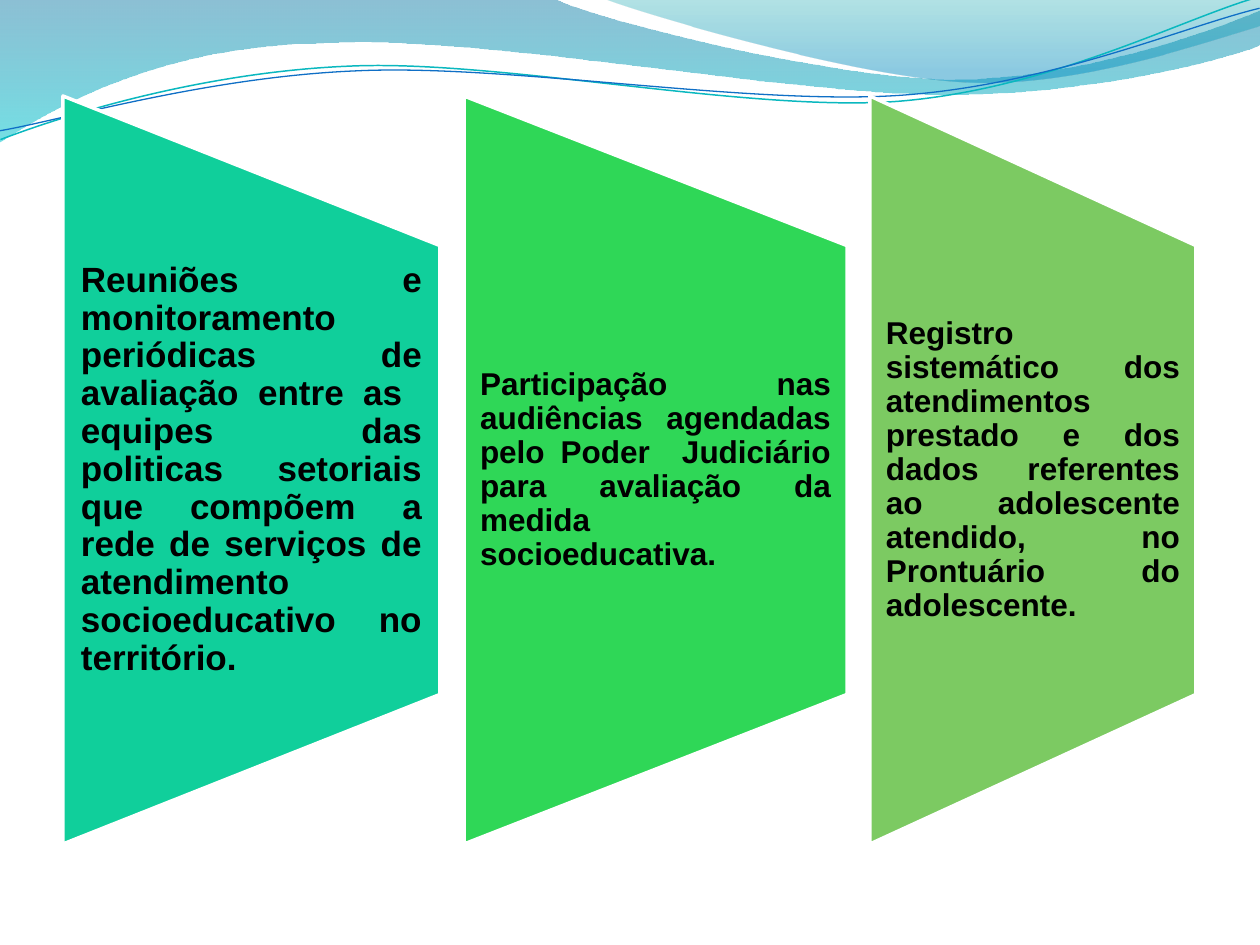
from dataclasses import dataclass

from pptx import Presentation
from pptx import util as u
from pptx.dml.color import RGBColor
from pptx.enum import shapes, text
from pptx.oxml.ns import qn
from lxml import etree

SCALE = 914400 / 126  # EMU per px


@dataclass(frozen=True)
class Theme:
    font: str = "Arial"
    ink: str = "000000"
    edge: str = "FFFFFF"
    edge_pt: float = 2
    large: int = 20
    normal: int = 18
    teal: str = "10CF9B"
    green: str = "2FD757"
    olive: str = "7CCA62"
    # gradient stops: position, colour, opacity in percent
    wide_wave: tuple = ((0, "0074A1", 45), (100, "00C6CF", 55))
    right_wave: tuple = ((0, "00A1A9", 30), (80, "008BBF", 45))
    upper_line: tuple = ("0AB8BF", 0.85)
    lower_line: tuple = ("0F6FC6", 0.75)


T = Theme()

# Outlines: a pair is a line to a point, three pairs are a Bezier curve
WIDE_WAVE = [(0, 0), (554, -1),
             ((600, 21), (837, 79), (955, 79)),
             ((1075, 79), (1207, 33), (1260, 11)),
             (1261, 45),
             ((1239, 55), (1096, 96), (940, 94)),
             ((783, 94), (481, 35), (324, 43)),
             ((163, 45), (58, 105), (-1, 142))]
RIGHT_WAVE = [(604, -1),
              ((641, 14), (859, 78), (969, 82)),
              ((1079, 87), (1211, 40), (1260, 26)),
              (1260, 0)]

# Thin lines, drawn level and then tilted
LINE_TILT = 357.3
UPPER_LINE = [(-2, 110),
              ((58, 90), (200, 52), (350, 53)),
              ((499, 53), (745, 118), (896, 114)),
              ((1049, 109), (1184, 45), (1260, 27))]
LOWER_LINE = [(-2, 101),
              ((57, 94), (207, 57), (357, 58)),
              ((509, 58), (750, 112), (902, 108)),
              ((1052, 104), (1188, 52), (1262, 38))]

# Cards: left, width, side inset, colour, type size, wording
CARDS = [
    (63, 377, 18, T.teal, T.large,
     "Reuniões e monitoramento periódicas de avaliação entre as  equipes das "
     "politicas setoriais que compõem a rede de serviços de atendimento "
     "socioeducativo no território. "),
    (464, 383, 16, T.green, T.normal,
     "Participação nas audiências agendadas pelo Poder  Judiciário para "
     "avaliação da medida socioeducativa."),
    (870, 326, 16, T.olive, T.normal,
     "Registro sistemático dos atendimentos prestado e dos dados referentes "
     "ao adolescente atendido, no Prontuário do adolescente."),
]
CARD_MID, CARD_H, TEXT_H = 470, 748, 450


def px(n):
    return u.Emu(round(n * SCALE))


def rgb(value):
    return RGBColor.from_string(value)


def is_curve(part):
    return len(part) == 3


def add_outline(s, outline, close):
    """Lay out every point as a line, then join threes into curves."""
    start, *parts = outline
    points = [pt for part in parts for pt in (part if is_curve(part) else [part])]
    builder = s.shapes.build_freeform(*map(px, start))
    builder.add_line_segments([(px(x), px(y)) for x, y in points], close=close)
    sp = builder.convert_to_shape()
    sp.shadow.inherit = False

    lines = iter(list(sp._element.iter(qn("a:lnTo"))))
    for part in parts:
        line = next(lines)
        if is_curve(part):
            line.tag = qn("a:cubicBezTo")
            for _ in range(2):
                extra = next(lines)
                line.append(extra[0])
                extra.getparent().remove(extra)
    return sp


def add_wave(s, outline, stops):
    sp = add_outline(s, outline, True)
    sp.line.fill.background()
    sp.fill.gradient()
    sp.fill.gradient_angle = 270
    for stop, (position, colour, _) in zip(sp.fill.gradient_stops, stops):
        stop.position = position / 100
        stop.color.rgb = rgb(colour)
    for clr, (_, _, opacity) in zip(sp._element.spPr.iter(qn("a:srgbClr")), stops):
        etree.SubElement(clr, qn("a:alpha")).set("val", str(opacity * 1000))


def add_wave_line(s, outline, style):
    sp = add_outline(s, outline, False)
    sp.rotation = LINE_TILT
    sp.fill.background()
    sp.line.color.rgb = rgb(style[0])
    sp.line.width = u.Pt(style[1])


def add_card(s, left, width, inset, colour, size, wording):
    # Trapezoid turned on its side, so its wide edge is at the left
    sp = s.shapes.add_shape(
        shapes.MSO_SHAPE.FLOWCHART_MANUAL_OPERATION,
        px(left + (width - CARD_H) / 2), px(CARD_MID - width / 2),
        px(CARD_H), px(width))
    sp.rotation = 270
    sp.shadow.inherit = False
    sp.fill.solid()
    sp.fill.fore_color.rgb = rgb(colour)
    sp.line.color.rgb = rgb(T.edge)
    sp.line.width = u.Pt(T.edge_pt)

    # Upright wording
    box = s.shapes.add_textbox(px(left), px(CARD_MID - TEXT_H / 2),
                               px(width), px(TEXT_H))
    tf = box.text_frame
    tf.word_wrap = True
    tf.vertical_anchor = text.MSO_ANCHOR.MIDDLE
    tf.margin_left = tf.margin_right = px(inset)
    tf.margin_top = tf.margin_bottom = 0
    p = tf.paragraphs[0]
    p.alignment = text.PP_ALIGN.JUSTIFY
    p.line_spacing = 0.9
    r = p.add_run()
    r.text = wording
    r.font.name = T.font
    r.font.size = u.Pt(size)
    r.font.bold = True
    r.font.color.rgb = rgb(T.ink)


def main():
    prs = Presentation()
    prs.slide_width, prs.slide_height = px(1260), px(945)
    s = prs.slides.add_slide(prs.slide_layouts[6])

    # Header waves
    add_wave(s, WIDE_WAVE, T.wide_wave)
    add_wave(s, RIGHT_WAVE, T.right_wave)
    add_wave_line(s, UPPER_LINE, T.upper_line)
    add_wave_line(s, LOWER_LINE, T.lower_line)

    # Three cards
    for card in CARDS:
        add_card(s, *card)

    prs.save("out.pptx")


if __name__ == "__main__":
    main()
